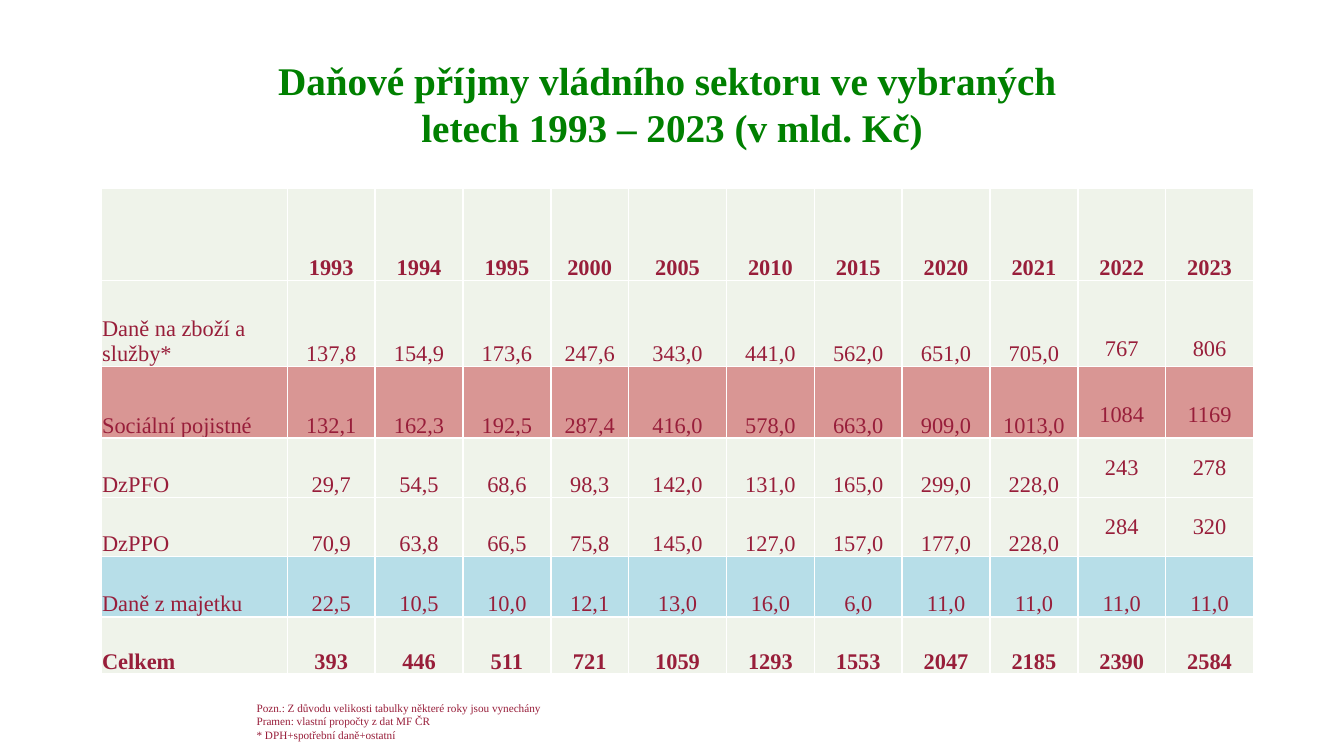
from lxml import etree
from pptx import Presentation
from pptx.dml.color import RGBColor
from pptx.enum.text import MSO_ANCHOR, PP_ALIGN
from pptx.oxml.ns import qn
from pptx.util import Cm, Pt

GREEN = RGBColor(0x00, 0x80, 0x00)
WINE = RGBColor(0x98, 0x1E, 0x3A)
PALE = RGBColor(0xEF, 0xF3, 0xEA)
ROSE = RGBColor(0xD9, 0x96, 0x94)
AQUA = RGBColor(0xB7, 0xDE, 0xE8)
WHITE = RGBColor(0xFF, 0xFF, 0xFF)
FONT = "Times New Roman"


def set_font(p, size, color, bold=False):
    p.font.name = FONT
    p.font.size = Pt(size)
    p.font.bold = bold
    p.font.color.rgb = color


def add_borders(cell, color):
    tcPr = cell._tc.get_or_add_tcPr()
    for i, side in enumerate(("lnL", "lnR", "lnT", "lnB")):
        ln = etree.Element(qn(f"a:{side}"), w=str(Pt(1)))
        fill = etree.SubElement(ln, qn("a:solidFill"))
        etree.SubElement(fill, qn("a:srgbClr"), val=str(color))
        tcPr.insert(i, ln)


prs = Presentation()
prs.slide_width, prs.slide_height = Cm(25.4), Cm(14.29)
s = prs.slides.add_slide(prs.slide_layouts[5])

# Title
title = s.shapes.title
title.left, title.top, title.width, title.height = Cm(4.13), Cm(0.97), Cm(17.15), Cm(1.98)
tf = title.text_frame
tf.word_wrap = True
tf.vertical_anchor = MSO_ANCHOR.MIDDLE
p = tf.paragraphs[0]
p.alignment = PP_ALIGN.CENTER
p.add_run().text = "Daňové příjmy vládního sektoru ve vybraných "
p.add_line_break()
p.add_run().text = "letech 1993 – 2023 (v mld. Kč)"
set_font(p, 21, GREEN, bold=True)

# Table: row height, fill, label, values
rows = [
    (1.75, PALE, "", "1993 1994 1995 2000 2005 2010 2015 2020 2021 2022 2023"),
    (1.63, PALE, "Daně na zboží a služby*",
     "137,8 154,9 173,6 247,6 343,0 441,0 562,0 651,0 705,0 767 806"),
    (1.35, ROSE, "Sociální pojistné",
     "132,1 162,3 192,5 287,4 416,0 578,0 663,0 909,0 1013,0 1084 1169"),
    (1.12, PALE, "DzPFO", "29,7 54,5 68,6 98,3 142,0 131,0 165,0 299,0 228,0 243 278"),
    (1.12, PALE, "DzPPO", "70,9 63,8 66,5 75,8 145,0 127,0 157,0 177,0 228,0 284 320"),
    (1.14, AQUA, "Daně z majetku", "22,5 10,5 10,0 12,1 13,0 16,0 6,0 11,0 11,0 11,0 11,0"),
    (1.08, PALE, "Celkem", "393 446 511 721 1059 1293 1553 2047 2185 2390 2584"),
]
col_widths = [3.52] + [1.66] * 3 + [1.47, 1.85] + [1.66] * 6
# Rows whose last two years sit in the middle, with their top margin
middle_rows = {1: 0.97, 2: 0.49, 3: 0.02, 4: 0.02}

table = s.shapes.add_table(len(rows), len(col_widths), Cm(1.91), Cm(3.55),
                           Cm(sum(col_widths)), Cm(sum(r[0] for r in rows))).table
table.first_row = table.horz_banding = False
for column, width in zip(table.columns, col_widths):
    column.width = Cm(width)

for i, (height, fill, label, values) in enumerate(rows):
    table.rows[i].height = Cm(height)
    for j, text in enumerate([label] + values.split()):
        cell = table.cell(i, j)
        cell.fill.solid()
        cell.fill.fore_color.rgb = fill
        add_borders(cell, WHITE)
        cell.margin_left = cell.margin_right = cell.margin_top = Cm(0.02)
        cell.margin_bottom = 0
        cell.vertical_anchor = MSO_ANCHOR.BOTTOM
        if i in middle_rows and j >= 10:
            cell.vertical_anchor = MSO_ANCHOR.MIDDLE
            cell.margin_top = Cm(middle_rows[i])
        p = cell.text_frame.paragraphs[0]
        p.text = text
        p.alignment = PP_ALIGN.CENTER if j else PP_ALIGN.LEFT
        set_font(p, 12, WINE, bold=i in (0, len(rows) - 1))

# Notes below the table
notes = [
    "Pozn.: Z důvodu velikosti tabulky některé roky jsou vynechány",
    "Pramen: vlastní propočty z dat MF ČR",
    "* DPH+spotřební daně+ostatní",
]
tf = s.shapes.add_textbox(Cm(4.6), Cm(13.13), Cm(9.53), Cm(1.02)).text_frame
tf.word_wrap = True
tf.text = "\n".join(notes)
for p in tf.paragraphs:
    set_font(p, 6, WINE)

prs.save("out.pptx")
